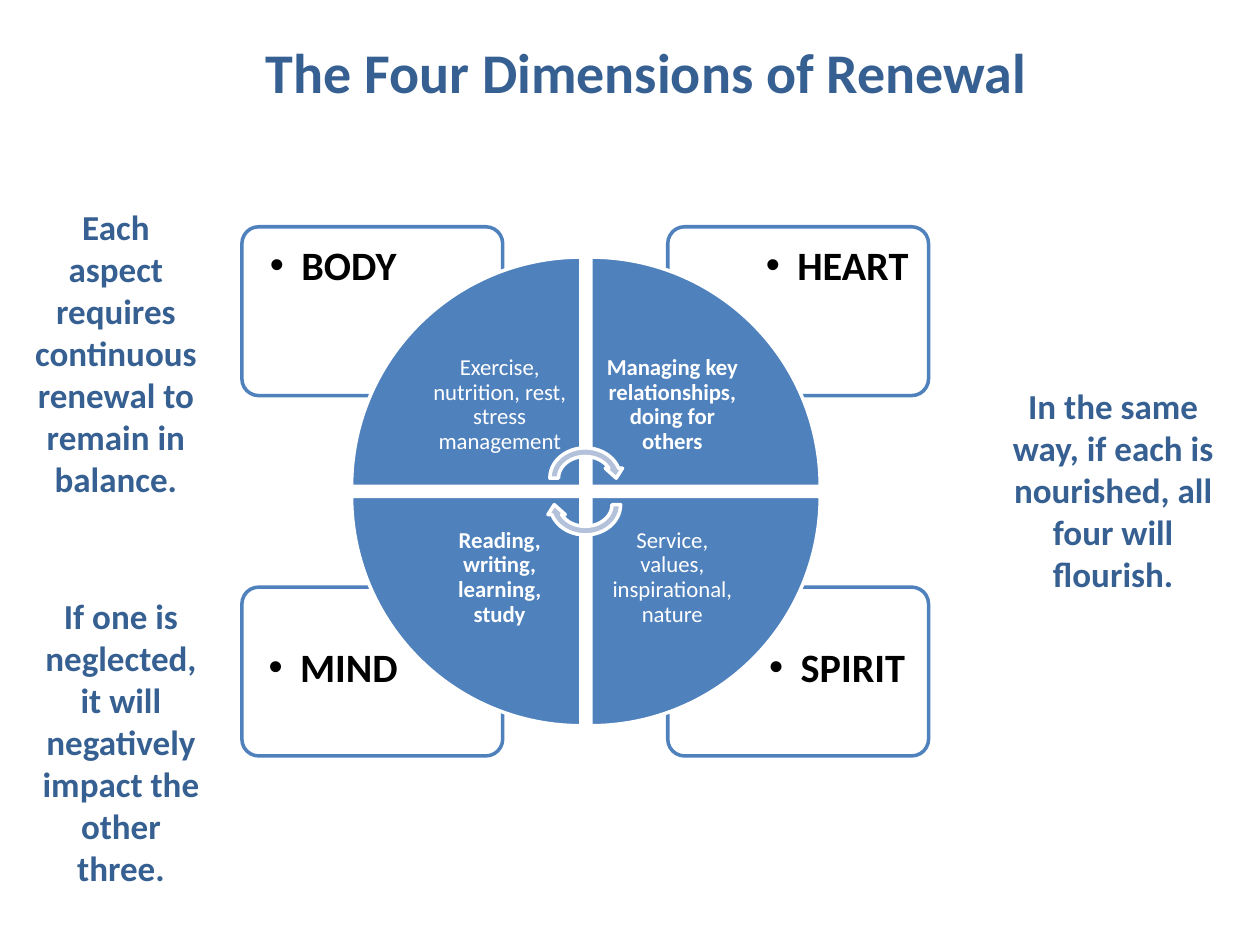
import dataclasses

import pptx
import pptx.dml.color
import pptx.enum.shapes
import pptx.enum.text
import pptx.oxml.ns
import pptx.util
from lxml import etree

Inches = pptx.util.Inches
Pt = pptx.util.Pt
Preset = pptx.enum.shapes.MSO_SHAPE
Anchor = pptx.enum.text.MSO_ANCHOR


@dataclasses.dataclass(frozen=True)
class Theme:
    font: str = "Calibri"
    heading: str = "376092"
    blue: str = "4F81BD"
    pale: str = "B3C1DB"
    white: str = "FFFFFF"
    black: str = "000000"
    title_size: int = 32
    note_size: int = 20
    label_size: int = 23
    detail_size: int = 13
    line_width: int = 2


class RenewalSlide:
    def __init__(self, slide, theme):
        self.slide = slide
        self.theme = theme

    def shape(self, preset, left, top, width, height, fill, line, rotation=0):
        shape = self.slide.shapes.add_shape(
            preset, Inches(left), Inches(top), Inches(width), Inches(height))
        shape.shadow.inherit = False
        shape.rotation = rotation
        shape.fill.solid()
        shape.fill.fore_color.rgb = pptx.dml.color.RGBColor.from_string(fill)
        shape.line.color.rgb = pptx.dml.color.RGBColor.from_string(line)
        shape.line.width = Pt(self.theme.line_width)
        return shape

    def text(self, words, left, top, width, height, size, color, bold=True,
             inset=None, anchor=Anchor.TOP, line_spacing=None):
        box = self.slide.shapes.add_textbox(
            Inches(left), Inches(top), Inches(width), Inches(height))
        frame = box.text_frame
        frame.word_wrap = True
        frame.vertical_anchor = anchor
        if inset is None:
            frame.auto_size = pptx.enum.text.MSO_AUTO_SIZE.SHAPE_TO_FIT_TEXT
        else:
            frame.margin_left = frame.margin_right = Inches(inset)
            frame.margin_top = frame.margin_bottom = Inches(inset)
        paragraph = frame.paragraphs[0]
        paragraph.alignment = pptx.enum.text.PP_ALIGN.CENTER
        if line_spacing:
            paragraph.line_spacing = line_spacing
        run = paragraph.add_run()
        run.text = words
        run.font.name = self.theme.font
        run.font.size = Pt(size)
        run.font.bold = bold
        run.font.color.rgb = pptx.dml.color.RGBColor.from_string(color)
        return paragraph

    def card(self, left, top, width, height):
        card = self.shape(Preset.ROUNDED_RECTANGLE, left, top, width, height,
                          self.theme.white, self.theme.blue)
        card.adjustments[0] = 0.1
        qn = pptx.oxml.ns.qn
        fill_color = card.fill._xPr.find(qn("a:solidFill"))[0]
        etree.SubElement(fill_color, qn("a:alpha"), val="90000")

    def label(self, words, left, top, width, height):
        paragraph = self.text(words, left, top, width, height,
                              self.theme.label_size, self.theme.black,
                              inset=0.12, line_spacing=0.9)
        qn = pptx.oxml.ns.qn
        properties = paragraph._p.get_or_add_pPr()
        properties.set("marL", str(Inches(0.25)))
        properties.set("indent", str(Inches(-0.25)))
        etree.SubElement(properties, qn("a:buFont"), typeface="Arial")
        etree.SubElement(properties, qn("a:buChar"), char="•")

    def wedge(self, left, top, size, rotation):
        self.shape(Preset.PIE_WEDGE, left, top, size, size,
                   self.theme.blue, self.theme.white, rotation)

    def detail(self, words, left, top, size, bold):
        self.text(words, left, top, size, size, self.theme.detail_size,
                  self.theme.white, bold, inset=0.1, anchor=Anchor.MIDDLE,
                  line_spacing=0.9)

    def arrow(self, top, rotation):
        self.shape(Preset.CIRCULAR_ARROW, 4.33, top, 0.63, 0.55,
                   self.theme.pale, self.theme.white, rotation)

    def note(self, words, left, top, width, height):
        self.text(words, left, top, width, height, self.theme.note_size,
                  self.theme.heading)


DIMENSIONS = [
    ("BODY", "Exercise, nutrition, rest, stress management", False, 0, 0, 0),
    ("HEART", "Managing key relationships, doing for others", True, 1, 0, 90),
    ("SPIRIT", "Service, values, inspirational, nature", False, 1, 1, 180),
    ("MIND", "Reading, writing, learning, study", True, 0, 1, 270),
]
CARD_W, CARD_H = 2.07, 1.34
LABEL_W, LABEL_H, LABEL_GAP = 1.39, 0.95, 0.03
WEDGE, DETAIL = 1.82, 1.29
NOTES = [
    ("Each aspect requires continuous renewal to remain in balance.",
     0.17, 1.58, 1.5, 2.46),
    ("If one is neglected, it will negatively impact the other three.",
     0.17, 4.67, 1.58, 2.46),
    ("In the same way, if each is nourished, all four will flourish.",
     7.92, 3, 1.83, 1.78),
]


def main():
    deck = pptx.Presentation()
    deck.slide_width, deck.slide_height = Inches(10), Inches(7.5)
    theme = Theme()
    renewal = RenewalSlide(deck.slides.add_slide(deck.slide_layouts[6]), theme)

    for name, _, _, column, row, _ in reversed(DIMENSIONS):
        left, top = 1.92 + 3.38 * column, 1.8 + 2.86 * row
        renewal.card(left, top, CARD_W, CARD_H)
        label_left = left + (CARD_W - LABEL_W - LABEL_GAP if column else LABEL_GAP)
        label_top = top + (CARD_H - LABEL_H - LABEL_GAP if row else LABEL_GAP)
        renewal.label(name, label_left, label_top, LABEL_W, LABEL_H)

    for _, practice, bold, column, row, rotation in DIMENSIONS:
        left, top = 2.79 + 1.9 * column, 2.04 + 1.9 * row
        renewal.wedge(left, top, WEDGE, rotation)
        renewal.detail(practice, left + (WEDGE - DETAIL) * (1 - column),
                       top + (WEDGE - DETAIL) * (1 - row), DETAIL, bold)

    renewal.arrow(3.52, 0)
    renewal.arrow(3.73, 180)

    renewal.text("The Four Dimensions of Renewal", 0.92, 0.25, 8.42, 0.98,
                 theme.title_size, theme.heading)
    for note in NOTES:
        renewal.note(*note)

    deck.save("out.pptx")


if __name__ == "__main__":
    main()
